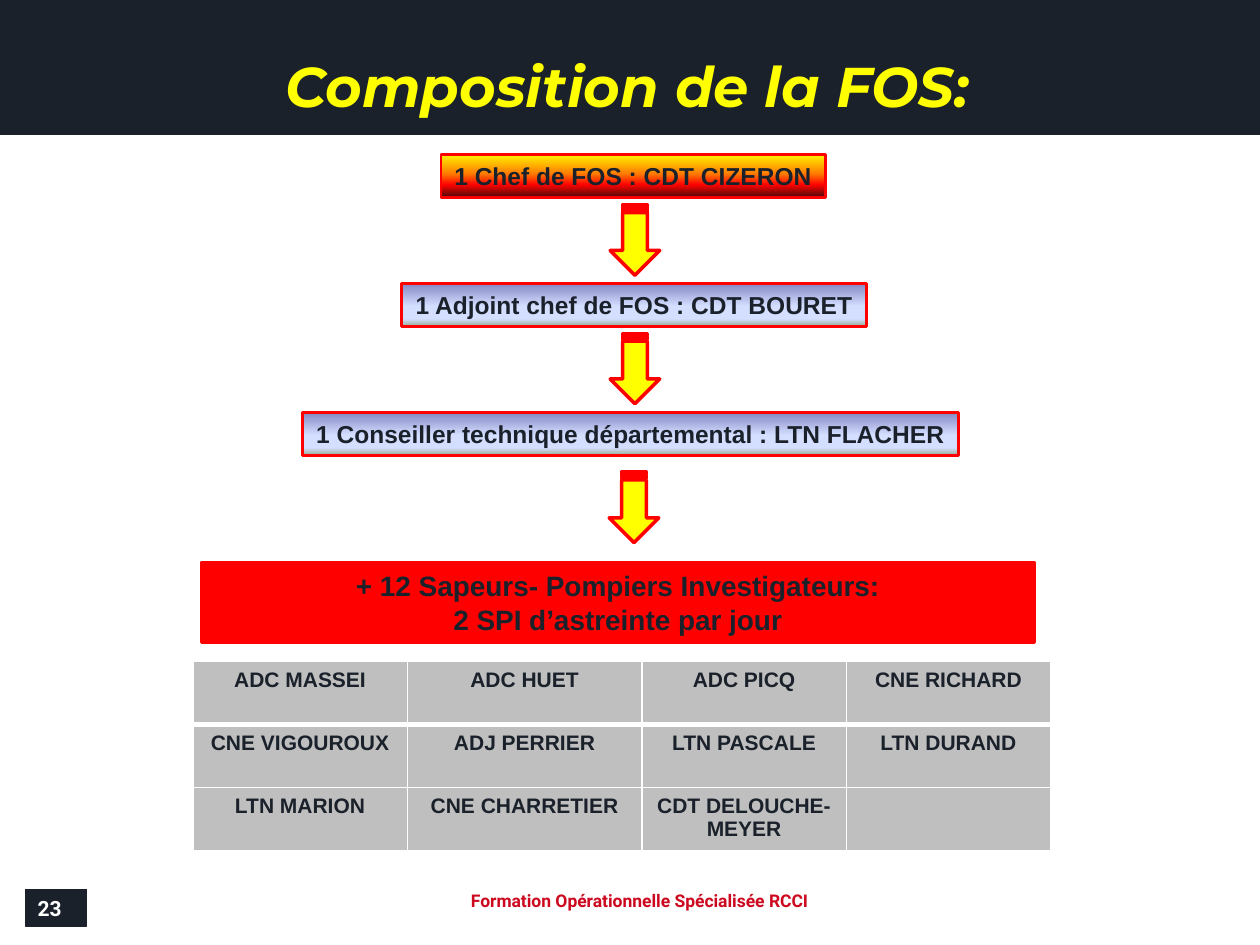
from lxml import etree
from pptx import Presentation
from pptx import util as u
from pptx.dml.color import RGBColor
from pptx.enum import shapes, text
from pptx.oxml import ns

DARK, RED, YELLOW, WHITE, GREY = "1A212B", "FF0000", "FFFF00", "FFFFFF", "BFBFBF"
FIRE = [(0, "FFF200"), (45, "FF7A00"), (70, "FF0300"), (100, "4D0808")]
BLUE = [(0, "8488C4"), (53, "D4DEFF"), (83, "D4DEFF"), (100, "96AB94")]
CENTER, LEFT = text.PP_ALIGN.CENTER, text.PP_ALIGN.LEFT
RANKS = [
    ("1 Chef de FOS : CDT CIZERON", 8.89, 7.75, FIRE),
    ("1 Adjoint chef de FOS : CDT BOURET", 8.1, 9.37, BLUE),
    ("1 Conseiller technique départemental : LTN FLACHER", 6.1, 13.23, BLUE),
]
RANK_TOP, RANK_STEP = 3.12, 2.6
ARROWS = [(12.09, 4.34), (12.09, 6.93), (12.07, 9.73)]
INVESTIGATORS = [
    ["ADC MASSEI", "ADC HUET", "ADC PICQ", "CNE RICHARD"],
    ["CNE VIGOUROUX", "ADJ PERRIER", "LTN PASCALE", "LTN DURAND"],
    ["LTN MARION", "CNE CHARRETIER", "CDT DELOUCHE- MEYER", ""],
]
COLUMN_WIDTHS = [4.32, 4.73, 4.12, 4.12]
ROW_HEIGHT = 1.27


def color(value):
    return RGBColor.from_string(value)


def place(left, top, width, height):
    return [u.Cm(length) for length in (left, top, width, height)]


def write(frame, lines, size, font="Arial", ink=DARK, align=CENTER, italic=None):
    for index, line in enumerate(lines):
        para = frame.add_paragraph() if index else frame.paragraphs[0]
        para.alignment = align
        span = para.add_run()
        span.text = line
        span.font.name = font
        span.font.size = u.Pt(size)
        span.font.bold = True
        span.font.italic = italic
        span.font.color.rgb = color(ink)


def add_block(page, bounds, fill, line, weight, kind=shapes.MSO_SHAPE.RECTANGLE):
    block = page.shapes.add_shape(kind, *place(*bounds))
    block.shadow.inherit = False
    block.fill.solid()
    block.fill.fore_color.rgb = color(fill)
    block.line.color.rgb = color(line)
    block.line.width = u.Pt(weight)
    return block


def shade(block, stops):
    block.fill.gradient()
    block.fill.gradient_angle = 270
    stop_list = next(block._element.iter(ns.qn("a:gsLst")))
    for stop in list(stop_list):
        stop_list.remove(stop)
    for position, value in stops:
        stop = etree.SubElement(stop_list, ns.qn("a:gs"), pos=str(position * 1000))
        etree.SubElement(stop, ns.qn("a:srgbClr"), val=value)


def add_title(page):
    title = page.shapes.title
    page.shapes._spTree.append(title._element)
    title.left, title.top, title.width, title.height = place(1, 0.91, 23.3, 1.63)
    title.text_frame.vertical_anchor = text.MSO_ANCHOR.MIDDLE
    write(title.text_frame, ["Composition de la FOS:"], 32, "Montserrat", YELLOW, italic=True)


def add_footer(page):
    box = page.shapes.add_textbox(*place(7.49, 17.93, 10.8, 0.61))
    frame = box.text_frame
    frame.word_wrap = True
    frame.margin_top = frame.margin_bottom = u.Cm(0.1)
    write(frame, ["Formation Opérationnelle Spécialisée RCCI"], 10, "Roboto", "CD0920")
    frame.paragraphs[0].line_spacing = 0.8
    number = add_block(page, (0.51, 17.93, 1.24, 0.74), DARK, DARK, 0.75)
    write(number.text_frame, ["23"], 12, "Roboto", WHITE, LEFT)


def add_rank(page, index, label, left, width, stops):
    box = add_block(page, (left, RANK_TOP + index * RANK_STEP, width, 0.86), WHITE, RED, 1.5)
    shade(box, stops)
    box.text_frame.word_wrap = False
    box.text_frame.auto_size = text.MSO_AUTO_SIZE.SHAPE_TO_FIT_TEXT
    write(box.text_frame, [label], 14)


def add_arrow(page, left, top):
    arrow = add_block(page, (left, top, 1.42, 1), YELLOW, RED, 2,
                      shapes.MSO_SHAPE.STRIPED_RIGHT_ARROW)
    arrow.rotation = 90


def set_borders(cell, weights):
    properties = cell._tc.get_or_add_tcPr()
    for index, (side, weight) in enumerate(weights.items()):
        edge = etree.Element(ns.qn("a:ln" + side), w=str(u.Pt(weight)))
        fill = etree.SubElement(edge, ns.qn("a:solidFill"))
        etree.SubElement(fill, ns.qn("a:srgbClr"), val=WHITE)
        properties.insert(index, edge)


def add_investigators(page):
    rows, columns = len(INVESTIGATORS), len(COLUMN_WIDTHS)
    bounds = place(3.89, 13.34, sum(COLUMN_WIDTHS), rows * ROW_HEIGHT)
    table = page.shapes.add_table(rows, columns, *bounds).table
    for column, width in zip(table.columns, COLUMN_WIDTHS):
        column.width = u.Cm(width)
    for row_index, names in enumerate(INVESTIGATORS):
        table.rows[row_index].height = u.Cm(ROW_HEIGHT)
        for column_index, name in enumerate(names):
            cell = table.cell(row_index, column_index)
            cell.fill.solid()
            cell.fill.fore_color.rgb = color(GREY)
            set_borders(cell, {"L": 1, "R": 1, "T": 1, "B": 1 if row_index else 3})
            if name:
                write(cell.text_frame, [name], 12)


def main():
    deck = Presentation()
    deck.slide_width, deck.slide_height = u.Cm(25.4), u.Cm(19.05)
    page = deck.slides.add_slide(deck.slide_layouts[5])
    add_block(page, (0, 0, 25.4, 2.72), DARK, DARK, 0.75)
    add_title(page)
    add_footer(page)
    for index, rank in enumerate(RANKS):
        add_rank(page, index, *rank)
    team = add_block(page, (4.06, 11.33, 16.79, 1.63), RED, RED, 1.5)
    write(team.text_frame,
          ["+ 12 Sapeurs- Pompiers Investigateurs:", "2 SPI d’astreinte par jour"], 16)
    for left, top in ARROWS:
        add_arrow(page, left, top)
    add_investigators(page)
    deck.save("out.pptx")


if __name__ == "__main__":
    main()
